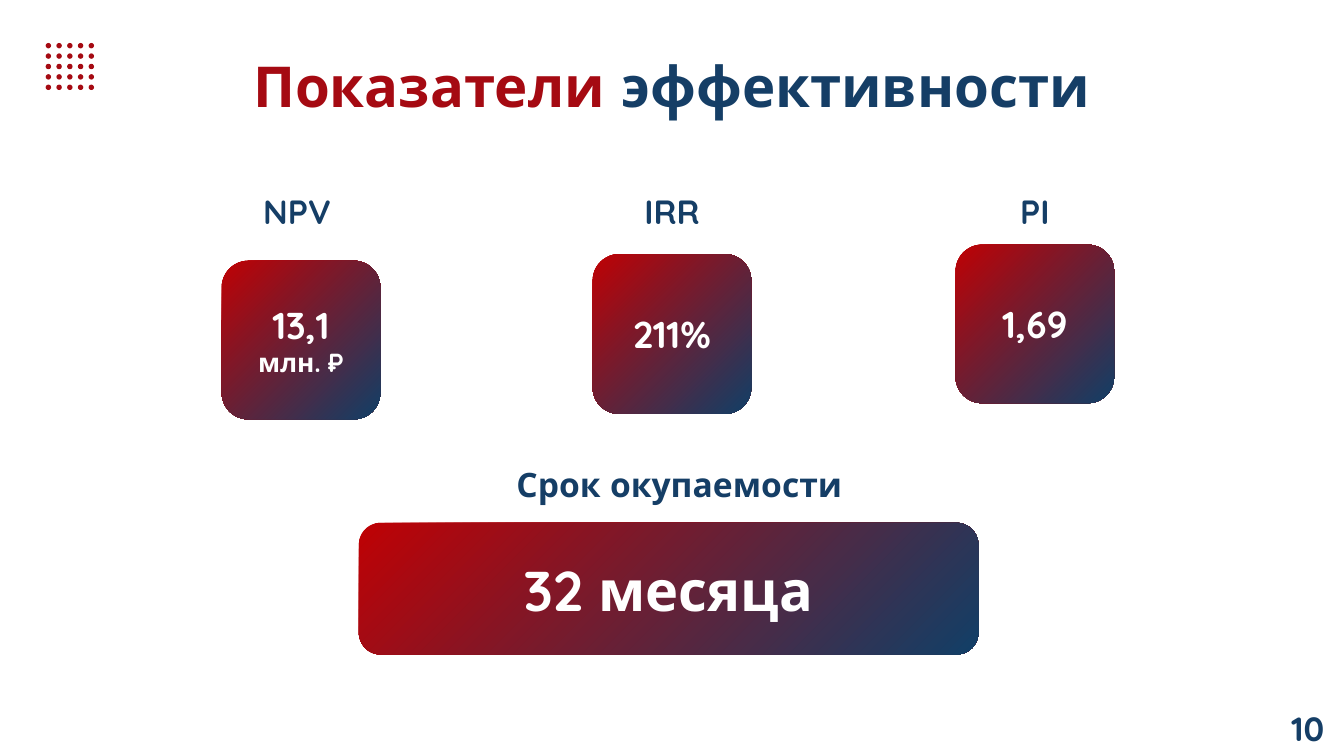
"""Build the slide with project efficiency indicators and the payback period."""
from dataclasses import dataclass

from pptx import Presentation
from pptx.dml.color import RGBColor
from pptx.enum.shapes import MSO_SHAPE
from pptx.enum.text import MSO_ANCHOR, PP_ALIGN
from pptx.util import Inches, Pt

ROUNDED, OVAL = MSO_SHAPE.ROUNDED_RECTANGLE, MSO_SHAPE.OVAL
TOP, MIDDLE = MSO_ANCHOR.TOP, MSO_ANCHOR.MIDDLE
LEFT, CENTER = PP_ALIGN.LEFT, PP_ALIGN.CENTER


@dataclass(frozen=True)
class Theme:
    font: str = "Quicksand"
    red: RGBColor = RGBColor(0xA5, 0x0A, 0x12)
    navy: RGBColor = RGBColor(0x15, 0x3E, 0x66)
    white: RGBColor = RGBColor(0xFF, 0xFF, 0xFF)
    gradient: tuple = (RGBColor(0xBF, 0x01, 0x04), RGBColor(0x11, 0x3F, 0x67))
    title: float = 30.2
    payback: float = 30
    value: float = 20
    label: float = 18
    unit: float = 14


theme = Theme()


def write(holder, lines, anchor=MIDDLE, align=CENTER):
    """Fill a shape with lines, each a list of (text, size, color) runs."""
    frame = holder.text_frame
    frame.word_wrap = True
    frame.vertical_anchor = anchor
    frame.margin_left = frame.margin_right = Inches(0.1)
    frame.margin_top = frame.margin_bottom = Inches(0.1)
    for index, runs in enumerate(lines):
        paragraph = frame.add_paragraph() if index else frame.paragraphs[0]
        paragraph.alignment = align
        for text, size, color in runs:
            run = paragraph.add_run()
            run.text = text
            run.font.name = theme.font
            run.font.size = Pt(size)
            run.font.bold = True
            run.font.color.rgb = color


def add_card(left, top, width, height, lines):
    """Add a rounded card with the red-to-navy gradient."""
    card = slide.shapes.add_shape(
        ROUNDED, Inches(left), Inches(top), Inches(width), Inches(height))
    card.shadow.inherit = False
    card.adjustments[0] = 0.167
    card.line.fill.background()
    card.fill.gradient()
    card.fill.gradient_angle = 315
    for stop, color in zip(card.fill.gradient_stops, theme.gradient):
        stop.color.rgb = color
    write(card, lines)


presentation = Presentation()
presentation.slide_width = Inches(10)
presentation.slide_height = Inches(10 * 9 / 16)
slide = presentation.slides.add_slide(presentation.slide_layouts[6])

title = slide.shapes.add_textbox(Inches(0.34), Inches(0.32), Inches(9.32), Inches(0.63))
write(title, [[("Показатели ", theme.title, theme.red),
               ("эффективности", theme.title, theme.navy)]])

indicators = [
    ("NPV", 1.75, 1.65, 1.94, 1.18, [("13,1", theme.value), ("млн. ₽", theme.unit)]),
    ("IRR", 4.54, 4.41, 1.89, 1.19, [("211%", theme.value)]),
    ("PI", 7.24, 7.11, 1.82, 1.18, [("1,69", theme.value)]),
]
for name, label_left, card_left, card_top, card_height, values in indicators:
    add_card(card_left, card_top, 1.18, card_height,
             [[(text, size, theme.white)] for text, size in values])
    label = slide.shapes.add_textbox(
        Inches(label_left), Inches(1.31), Inches(0.92), Inches(0.52))
    write(label, [[(name, theme.label, theme.navy)]])

add_card(2.67, 3.89, 4.61, 0.98, [[("32 месяца", theme.payback, theme.white)]])
payback_label = slide.shapes.add_textbox(
    Inches(3.63), Inches(3.34), Inches(2.85), Inches(0.52))
write(payback_label, [[("Срок окупаемости", theme.label, theme.navy)]])

dots_per_side = 5
dot_size = Inches(0.04)
column_step = Inches(0.32) / (dots_per_side - 1)
row_step = Inches(0.31) / (dots_per_side - 1)
for row in range(dots_per_side):
    for column in range(dots_per_side):
        dot = slide.shapes.add_shape(
            OVAL, int(Inches(0.34) + column * column_step),
            int(Inches(0.32) + row * row_step), dot_size, dot_size)
        dot.shadow.inherit = False
        dot.fill.solid()
        dot.fill.fore_color.rgb = theme.red
        dot.line.fill.background()

page_number = slide.shapes.add_textbox(
    Inches(9.51), Inches(5.17), Inches(0.49), Inches(0.46))
write(page_number, [[("10", theme.label, theme.navy)]], TOP, LEFT)

presentation.save("out.pptx")
